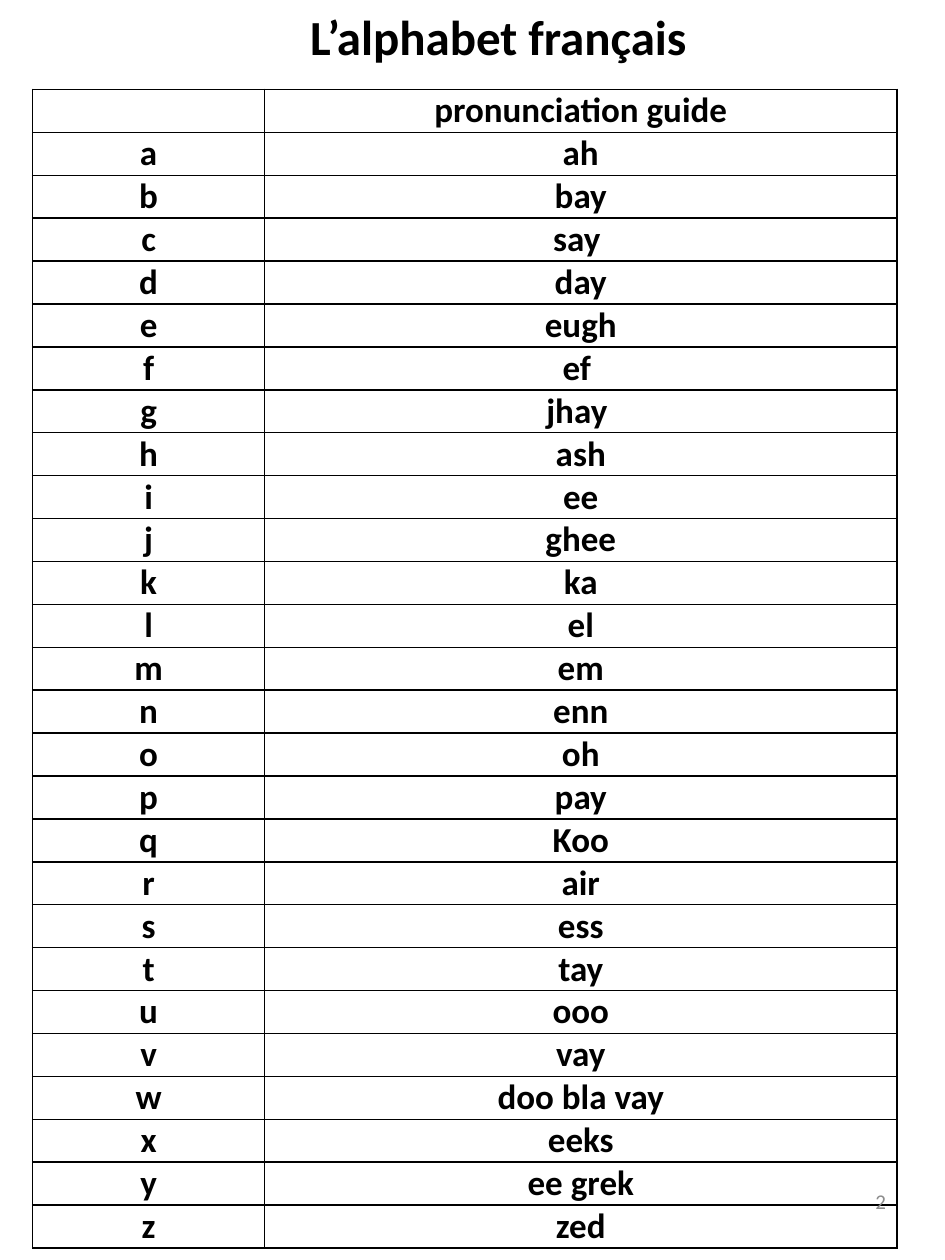
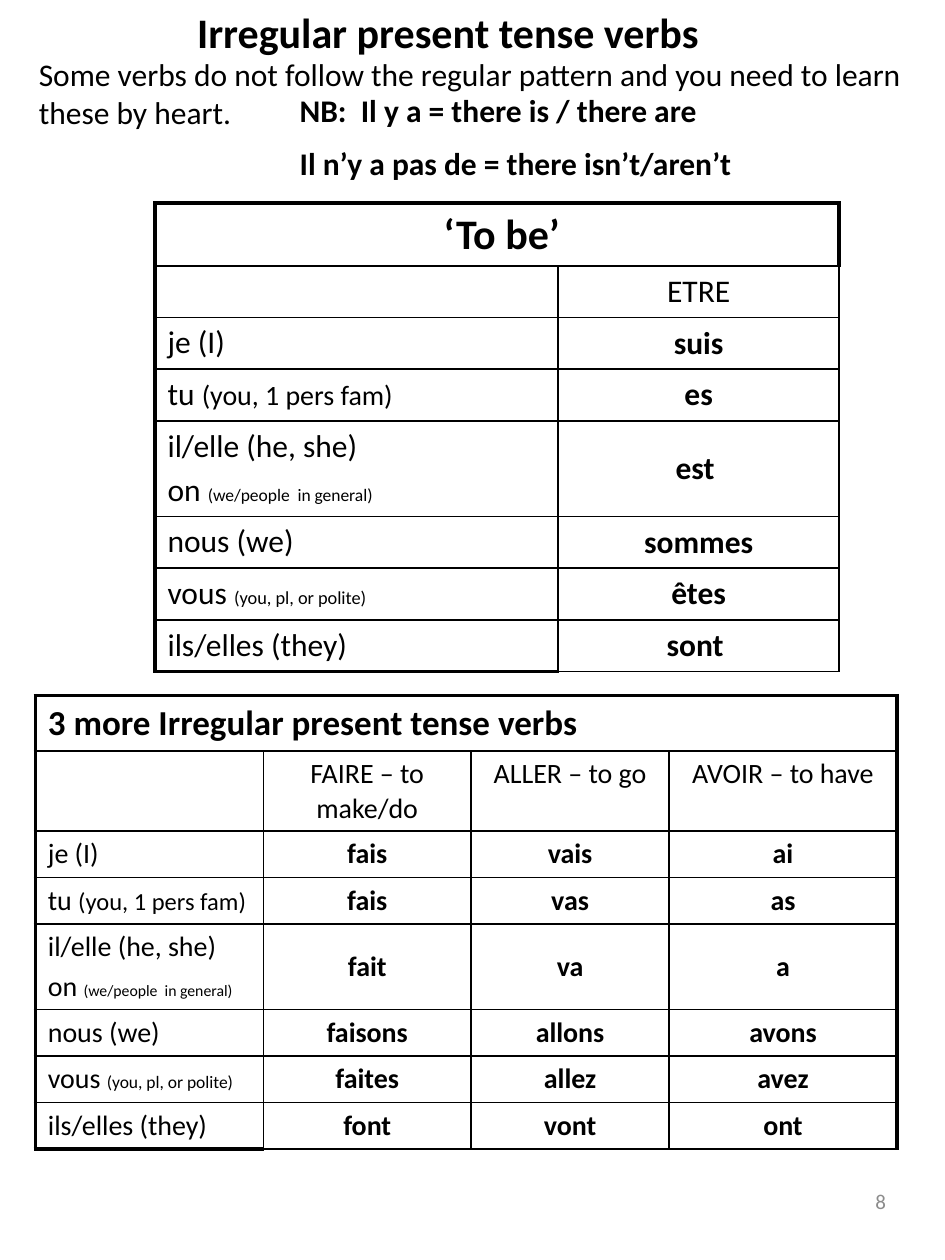
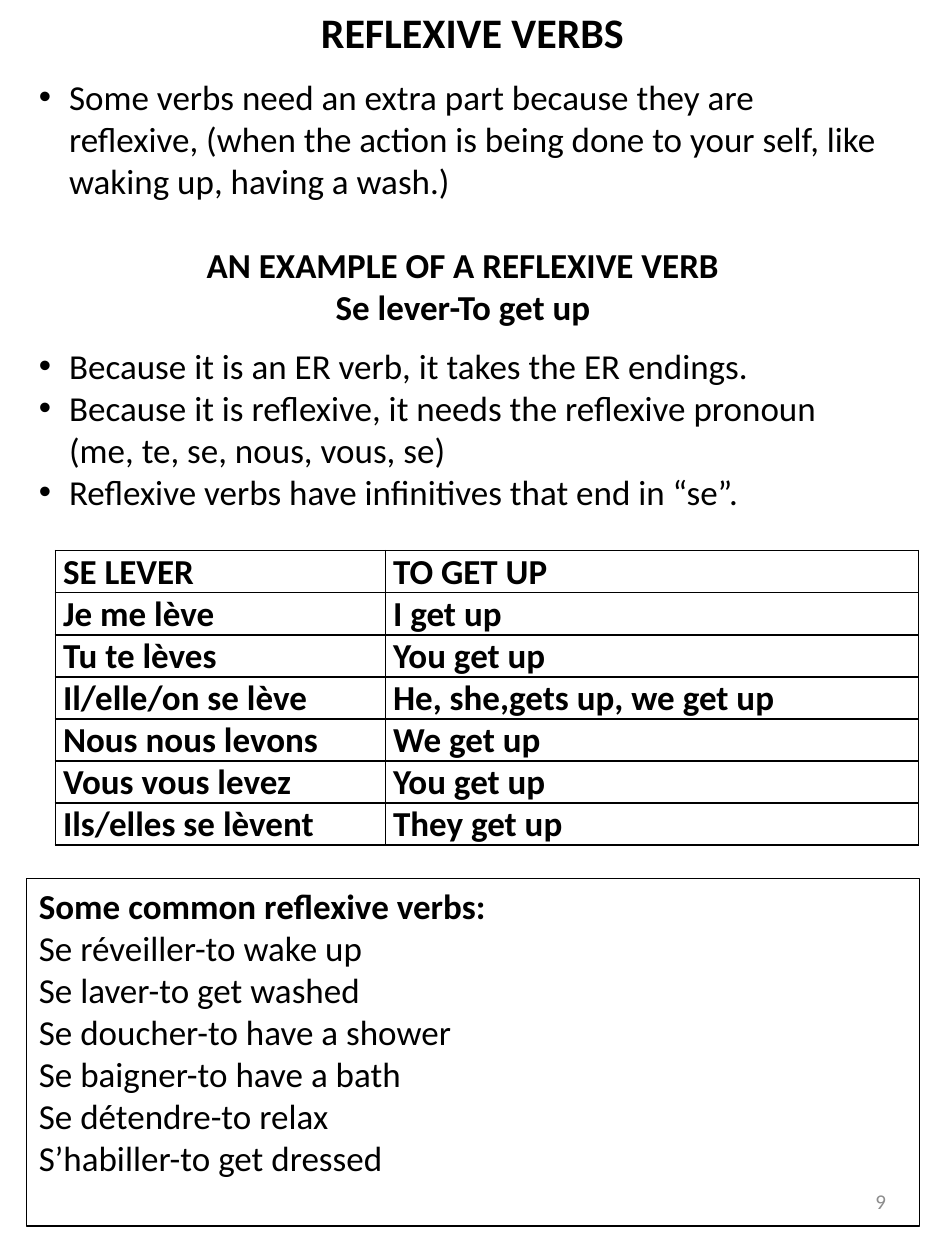
from lxml import etree
from pptx import Presentation
from pptx import util as u
from pptx.dml import color
from pptx.enum import shapes, text
from pptx.oxml import ns

FONT, BLACK, GREY = "Calibri", "000000", "8C8C8C"
THIN, THICK = 1, 2.25
LEFT, CENTER, RIGHT = text.PP_ALIGN.LEFT, text.PP_ALIGN.CENTER, text.PP_ALIGN.RIGHT


def write(frame, lines, size, bold=False, align=LEFT, gap=0, ink=BLACK):
    """Fill a text frame; a line is a string or a list of (text, size) runs."""
    frame.word_wrap = True
    for index, line in enumerate(lines):
        paragraph = frame.paragraphs[0] if index == 0 else frame.add_paragraph()
        paragraph.alignment = align
        font = paragraph.font
        font.name, font.size, font.bold = FONT, u.Pt(size), bold
        font.color.rgb = color.RGBColor.from_string(ink)
        if index and gap:
            paragraph.space_before = u.Pt(gap)
        for words, run_size in [(line, None)] if isinstance(line, str) else line:
            run = paragraph.add_run()
            run.text = words
            if run_size:
                run.font.size = u.Pt(run_size)


def add_grid(slide, left, top, widths, heights, margins=(0.1, 0.05), frame=False, heavy_right=False):
    """Add an unfilled table with black rules, and a heavy frame if asked for."""
    table = slide.shapes.add_table(
        len(heights), len(widths), u.Inches(left), u.Inches(top),
        u.Inches(sum(widths)), u.Inches(sum(heights))).table
    table.first_row = table.horz_banding = False
    for column, width in zip(table.columns, widths):
        column.width = u.Inches(width)
    for row, height in zip(table.rows, heights):
        row.height = u.Inches(height)
    last_row, last_column = len(heights) - 1, len(widths) - 1
    for r, row in enumerate(table.rows):
        for c, cell in enumerate(row.cells):
            cell.margin_left = cell.margin_right = u.Inches(margins[0])
            cell.margin_top = cell.margin_bottom = u.Inches(margins[1])
            heavy = {"lnL": c == 0, "lnR": r == 0 or (heavy_right and c == last_column),
                     "lnT": r == 0, "lnB": r == last_row and c == 0}
            properties = cell._tc.get_or_add_tcPr()
            for side, is_heavy in heavy.items():
                width = THICK if frame and is_heavy else THIN
                line = etree.SubElement(properties, ns.qn("a:" + side), w=str(u.Pt(width)))
                fill = etree.SubElement(line, ns.qn("a:solidFill"))
                etree.SubElement(fill, ns.qn("a:srgbClr"), val=BLACK)
            cell.fill.background()
    return table


presentation = Presentation()
presentation.slide_width, presentation.slide_height = u.Inches(7.5), u.Inches(10)
blank = presentation.slide_layouts[6]
alphabet_slide, irregular_slide, reflexive_slide = [
    presentation.slides.add_slide(blank) for _ in range(3)]

# Slide 1: alphabet table
sounds = ["ah", "bay", "say ", "day", "eugh", "ef ", "jhay ", "ash", "ee", "ghee", "ka", "el",
          "em", "enn", "oh", "pay", "Koo", "air", "ess", "tay", "ooo", "vay", "doo bla vay",
          "eeks", "ee grek", "zed"]
rows = [("", "pronunciation guide"), *zip("abcdefghijklmnopqrstuvwxyz", sounds)]
table = add_grid(alphabet_slide, 0.26, 0.71, [1.84, 5.02], [0.34] * len(rows), (0.03, 0))
for r, row in enumerate(rows):
    for c, words in enumerate(row):
        write(table.cell(r, c).text_frame, [words], 20, True, CENTER)

# Slide 2: irregular verb tables
pronouns = [
    [("je (I)", None)],
    [("tu ", None), ("(you, 1 pers fam)", "family")],
    [("il/elle (he, she)", None)],
    [("nous (we)", None)],
    [("vous ", None), ("(you, pl, or polite)", "polite")],
    [("ils/elles (they)", None)],
]
general = [("on ", None), ("(we/people  in general)", "general")]
verb_tables = [
    dict(place=(1.23, 1.61), widths=[3.2, 2.23], heights=[0.5] + [0.41] * 3 + [0.76] + [0.41] * 3,
         title=" ‘To be’", title_size=24, title_align=CENTER, size=18, heavy_right=False,
         notes={"family": 16, "general": 10, "polite": 10.5},
         verbs={"ETRE": ["suis", "es", "est ", "sommes", "êtes", "sont "]}),
    dict(place=(0.28, 5.52), widths=[1.81, 1.65, 1.57, 1.81],
         heights=[0.44, 0.63] + [0.37] * 2 + [0.67] + [0.37] * 3,
         title="3 more Irregular present tense verbs", title_size=20, title_align=LEFT, size=16,
         heavy_right=True, notes={"family": 14, "general": 9, "polite": 10},
         verbs={"FAIRE – to make/do": ["fais", "fais", "fait", "faisons", "faites", "font"],
                "ALLER – to go": ["vais", "vas", "va", "allons", "allez", "vont"],
                "AVOIR – to have": ["ai", "as", "a", "avons", "avez", "ont"]}),
]
for verb_table in verb_tables:
    size, notes = verb_table["size"], verb_table["notes"]
    table = add_grid(irregular_slide, *verb_table["place"], verb_table["widths"],
                     verb_table["heights"], frame=True, heavy_right=verb_table["heavy_right"])
    table.cell(0, 0).merge(table.cell(0, len(verb_table["widths"]) - 1))
    write(table.cell(0, 0).text_frame, [verb_table["title"]], verb_table["title_size"], True,
          verb_table["title_align"])
    write(table.cell(1, 0).text_frame, [""], size)
    for r, label in enumerate(pronouns, 2):
        lines = [label, general] if r == 4 else [label]
        lines = [[(words, notes.get(note)) for words, note in line] for line in lines]
        write(table.cell(r, 0).text_frame, lines, size, gap=size * 0.2)
    for c, (verb, forms) in enumerate(verb_table["verbs"].items(), 1):
        write(table.cell(1, c).text_frame, [verb], size, align=CENTER)
        for r, form in enumerate(forms, 2):
            table.cell(r, c).vertical_anchor = text.MSO_ANCHOR.MIDDLE
            write(table.cell(r, c).text_frame, [form], size, True, CENTER)

# Slide 3: verb table and boxed list
rows = [("SE LEVER", "TO GET UP"), ("Je me lève", "I get up"), ("Tu te lèves", "You get up"),
        ("Il/elle/on se lève", "He, she,gets up, we get up"), ("Nous nous levons", "We get up"),
        ("Vous vous levez", "You get up"), ("Ils/elles se lèvent", "They get up")]
table = add_grid(reflexive_slide, 0.44, 4.37, [2.62, 4.23], [0.33] * len(rows), (0.06, 0))
for r, row in enumerate(rows):
    for c, words in enumerate(row):
        write(table.cell(r, c).text_frame, [words], 20, True)

common_verbs = reflexive_slide.shapes.add_shape(
    shapes.MSO_SHAPE.RECTANGLE, u.Inches(0.21), u.Inches(6.97), u.Inches(7.09), u.Inches(2.76))
common_verbs.shadow.inherit = False
common_verbs.fill.background()
common_verbs.line.color.rgb = color.RGBColor.from_string(BLACK)
common_verbs.line.width = u.Pt(0.75)
common_verbs.text_frame.vertical_anchor = text.MSO_ANCHOR.TOP
write(common_verbs.text_frame, [
    "Some common reflexive verbs:", "Se réveiller-to wake up", "Se laver-to get washed",
    "Se doucher-to have a shower", "Se baigner-to have a bath", "Se détendre-to relax",
    "S’habiller-to get dressed"], 20)
common_verbs.text_frame.paragraphs[0].font.bold = True

# Titles, text blocks and page numbers: slide, place, lines, size, bold, alignment, gap, colour
explanation = [
    "Some verbs need an extra part because they are reflexive, (when the action is being done to "
    "your self, like waking up, having a wash.)",
    "AN EXAMPLE OF A REFLEXIVE VERB",
    "Se lever-To get up",
    "Because it is an ER verb, it takes the ER endings.",
    "Because it is reflexive, it needs the reflexive pronoun (me, te, se, nous, vous, se)",
    "Reflexive verbs have infinitives that end in “se”.",
]
number_place = (5.38, 9.27, 1.75, 0.53)
text_boxes = [
    (alphabet_slide, (2.34, 0, 3.23, 0.88), ["L’alphabet français"], 28, True, CENTER),
    (irregular_slide, (0.21, 0, 6.69, 0.5), ["Irregular present tense verbs"], 24, True, CENTER),
    (irregular_slide, (0.21, 0.39, 7.14, 0.71),
     ["Some verbs do not follow the regular pattern and you need to learn these by heart."], 18),
    (irregular_slide, (2.28, 0.67, 3.94, 0.86),
     ["NB:  Il y a = there is / there are", "Il n’y a pas de = there isn’t/aren’t"],
     18, True, LEFT, 9),
    (reflexive_slide, (0, 0, 7.5, 0.5), ["REFLEXIVE VERBS"], 24, True, CENTER),
    (alphabet_slide, number_place, ["2"], 12, False, RIGHT, 0, GREY),
    (irregular_slide, number_place, ["8"], 12, False, RIGHT, 0, GREY),
    (reflexive_slide, number_place, ["9"], 12, False, RIGHT, 0, GREY),
    (reflexive_slide, (0.21, 0.51, 6.93, 3.9), explanation, 20),
]
for slide, place, *content in text_boxes:
    frame = slide.shapes.add_textbox(*map(u.Inches, place)).text_frame
    write(frame, *content)
    if place == number_place:
        frame.vertical_anchor = text.MSO_ANCHOR.MIDDLE

# Bullets and headings of the explanation, the last box added
frame.margin_top = u.Inches(0.09)
for index, paragraph in enumerate(frame.paragraphs):
    if index in (1, 2):
        paragraph.alignment = CENTER
        paragraph.font.bold = True
        continue
    properties = paragraph._p.get_or_add_pPr()
    properties.set("marL", str(u.Inches(0.24)))
    properties.set("indent", str(-u.Inches(0.24)))
    defaults = properties.find(ns.qn("a:defRPr"))
    for tag, key, value in [("a:buFont", "typeface", "Arial"), ("a:buChar", "char", "•")]:
        bullet = etree.Element(ns.qn(tag))
        bullet.set(key, value)
        defaults.addprevious(bullet)
frame.paragraphs[1].space_before = u.Pt(24)
frame.paragraphs[3].space_before = u.Pt(9.5)

presentation.save("out.pptx")
